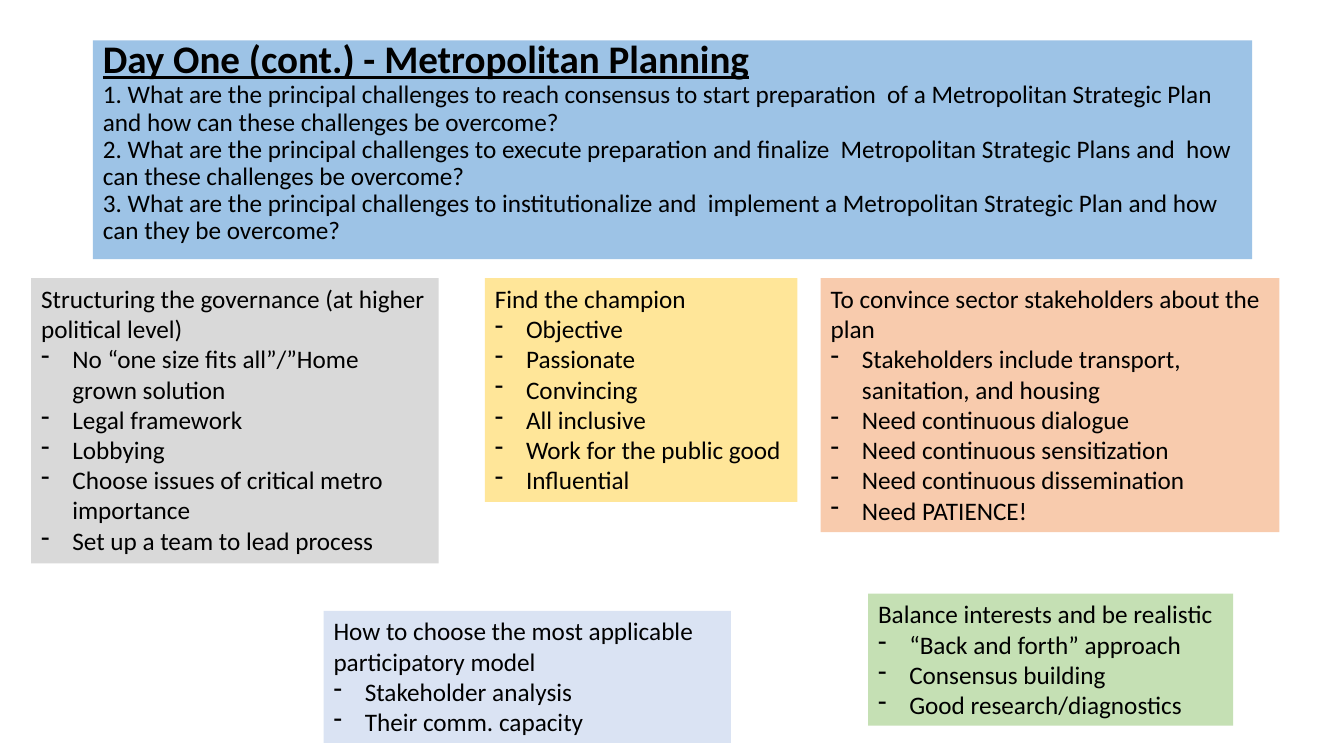
from lxml import etree
from pptx import Presentation
from pptx.dml.color import RGBColor
from pptx.enum import text as t
from pptx.oxml import ns
from pptx.util import Inches, Pt

# Content
HEAD = "Day One (cont.) - Metropolitan Planning"
ASKS = [
    "1. What are the principal challenges to reach consensus to start preparation  of a "
    "Metropolitan Strategic Plan and how can these challenges be overcome?",
    "2. What are the principal challenges to execute preparation and finalize  Metropolitan "
    "Strategic Plans and  how can these challenges be overcome?",
    "3. What are the principal challenges to institutionalize and  implement a Metropolitan "
    "Strategic Plan and how can they be overcome?",
]

BLACK = RGBColor(0, 0, 0)
BLUE = RGBColor(0x9D, 0xC3, 0xE6)
GREEN = RGBColor(0xC5, 0xE0, 0xB4)
GOLD = RGBColor(0xFF, 0xE6, 0x99)
PEACH = RGBColor(0xF8, 0xCB, 0xAD)
PALE = RGBColor(0xDA, 0xE3, 0xF3)
GRAY = RGBColor(0xD9, 0xD9, 0xD9)

TOP = 2.76  # shared top of the upper row
# (left, top, width, height), fill, heading, points
CARDS = [
    ((0.31, TOP, 4.04, 2.83), GRAY,
     "Structuring the governance (at higher political level)",
     ["No “one size fits all”/”Home grown solution", "Legal framework", "Lobbying",
      "Choose issues of critical metro importance", "Set up a team to lead process"]),
    ((4.81, TOP, 3.1, 2.22), GOLD, "Find the champion",
     ["Objective", "Passionate", "Convincing", "All inclusive",
      "Work for the public good", "Influential"]),
    ((8.14, TOP, 4.55, 2.52), PEACH,
     "To convince sector stakeholders about the plan",
     ["Stakeholders include transport, sanitation, and housing",
      "Need continuous dialogue", "Need continuous sensitization",
      "Need continuous dissemination", "Need PATIENCE!"]),
    ((3.21, 6.06, 4.04, 1.31), PALE,
     "How to choose the most applicable participatory model",
     ["Stakeholder analysis", "Their comm. capacity"]),
    ((8.61, 5.89, 3.62, 1.31), GREEN, "Balance interests and be realistic",
     ["“Back and forth” approach", "Consensus building", "Good research/diagnostics"]),
]


def paint(shape, color):
    shape.fill.solid()
    shape.fill.fore_color.rgb = color


def style(para):
    para.alignment = t.PP_ALIGN.LEFT
    font = para.font
    font.name, font.size = "Calibri", Pt(18)
    font.color.rgb = BLACK


def dash(para):
    props = para._p.get_or_add_pPr()
    props.set("marL", str(Inches(0.31)))
    props.set("indent", str(-Inches(0.31)))
    mark = etree.Element(ns.qn("a:buChar"), char="-")
    props.insert_element_before(mark, "a:tabLst", "a:defRPr", "a:extLst")


deck = Presentation()
deck.slide_width, deck.slide_height = Inches(13.33), Inches(7.5)
slide = deck.slides.add_slide(deck.slide_layouts[5])

# Title with the three questions
title = slide.shapes.title
title.left, title.top = Inches(0.92), Inches(0.4)
title.width, title.height = Inches(11.5), Inches(2.17)
paint(title, BLUE)
frame = title.text_frame
frame.auto_size = t.MSO_AUTO_SIZE.NONE
frame.vertical_anchor = t.MSO_ANCHOR.MIDDLE
frame.margin_bottom = Inches(0.19)
para = frame.paragraphs[0]
style(para)
para.line_spacing = 0.9
run = para.add_run()
run.text = HEAD
run.font.size = Pt(27.9)
run.font.bold = run.font.underline = True
for ask in ASKS:
    para.add_line_break()
    para.add_run().text = ask

# Answer cards
for place, color, head, points in CARDS:
    card = slide.shapes.add_textbox(*map(Inches, place))
    paint(card, color)
    frame = card.text_frame
    frame.word_wrap = True
    frame.auto_size = t.MSO_AUTO_SIZE.SHAPE_TO_FIT_TEXT
    para = frame.paragraphs[0]
    para.text = head
    style(para)
    for point in points:
        para = frame.add_paragraph()
        para.text = point
        style(para)
        dash(para)

deck.save("out.pptx")
